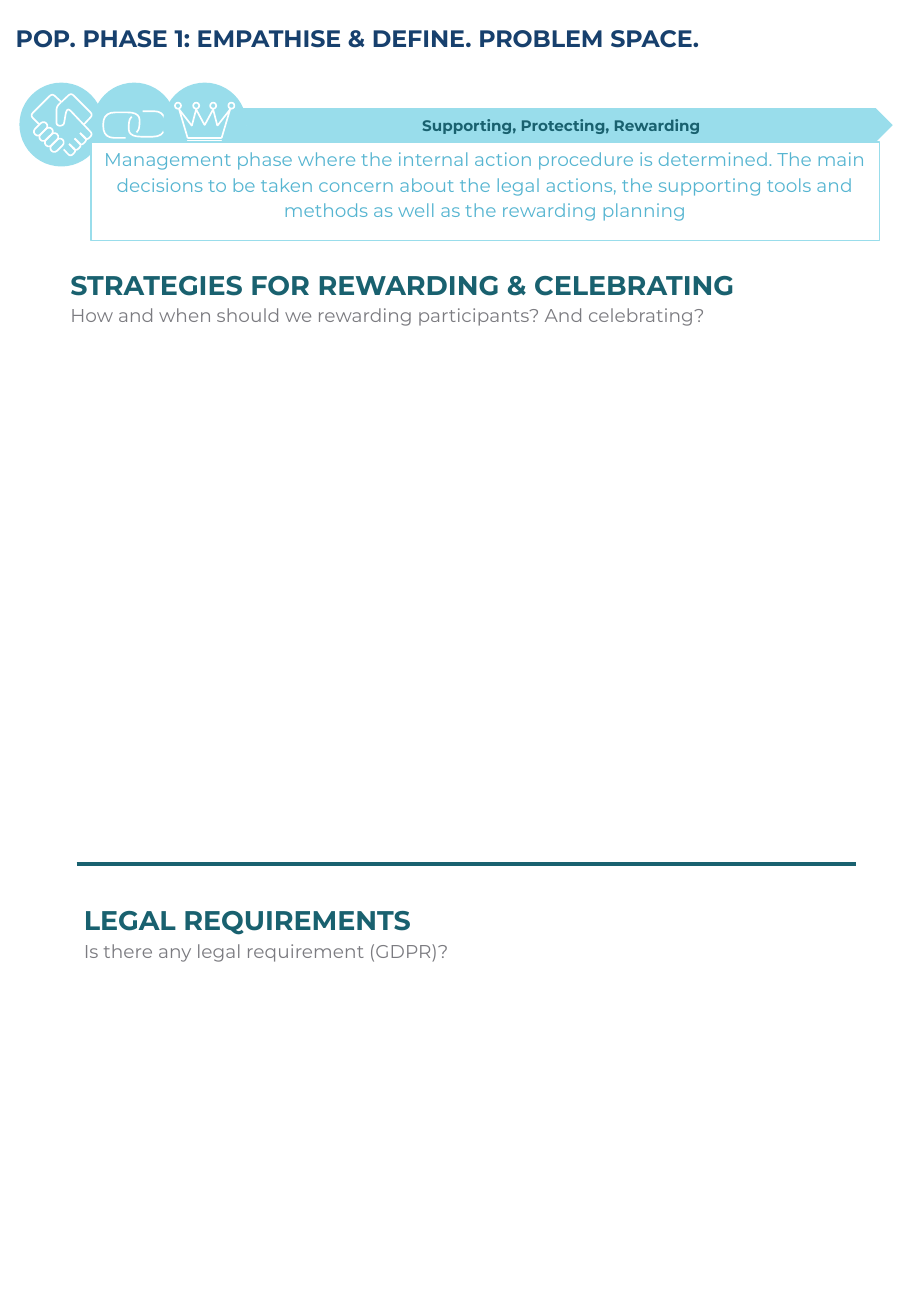
from math import dist
from pptx import Presentation
from pptx.dml.color import RGBColor
from pptx.enum.shapes import MSO_CONNECTOR, MSO_SHAPE
from pptx.enum.text import MSO_ANCHOR, PP_ALIGN
from pptx.oxml.xmlchemy import OxmlElement
from pptx.util import Inches, Pt

WHITE = RGBColor(0xFF, 0xFF, 0xFF)
NAVY = RGBColor(0x17, 0x40, 0x6D)
TEAL = RGBColor(0x19, 0x61, 0x6F)
AQUA = RGBColor(0x99, 0xDD, 0xEB)
SKY = RGBColor(0x56, 0xB5, 0xD1)
GREY = RGBColor(0x7B, 0x7B, 0x80)
FONT = "Montserrat"

TITLE = "POP. PHASE 1: EMPATHISE & DEFINE. PROBLEM SPACE."
PHASE = "Supporting, Protecting, Rewarding"
SUMMARY = (
    "Management phase where the internal action procedure is determined. "
    "The main decisions to be taken concern about the legal actions, the "
    "supporting tools and methods as well as the rewarding planning"
)
SECTIONS = [  # left, top, width, heading, question
    (0.52, 2.15, 5.8, "STRATEGIES FOR REWARDING & CELEBRATING",
     "How and when should we rewarding participants? And celebrating?"),
    (0.63, 7.38, 3.85, "LEGAL REQUIREMENTS",
     "Is there any legal requirement (GDPR)?"),
]

# Icon strokes: hundredths of an inch from the centre of their disc
DISC = 0.69
DISC_Y = 1.025
HANDS_X, CHAIN_X, CROWN_X = 0.505, 1.105, 1.685
PALMS = [
    [(-18.5, -0.5), (-25.5, -7.5), (-7.5, -25.5), (0, -18.5)],
    [(0, -18.5), (8, -26), (26, -8), (18.5, 0)],
    [(0, -18.5), (-4, -14.5), (-4, 1), (2, 1), (4, -11), (6, -13),
     (26, 8), (21, 13), (15.5, 7)],
]
FINGER = [(15.5, 7), (21.5, 12.5), (16.5, 17.5), (11, 11.5)]
FINGER_STEP = 4.5
LINK = [(-7, 11), (-25.5, 11), (-25.5, -10), (4.5, -10), (4.5, 3), (2, 6.5)]
CROWN = [(-21, -12.5), (-14, 11), (14, 11), (21, -12.5), (10.5, 1),
         (7, -12.5), (0, 0.5), (-7, -12.5), (-10.5, 1), (-21, -12.5)]
BEADS = [-22, -7, 7, 22]

prs = Presentation()
prs.slide_width, prs.slide_height = Inches(7.5), Inches(10.83)
slide = prs.slides.add_slide(prs.slide_layouts[6])
shapes = slide.shapes


def paint(shape, fill=None, line=None, width=1):
    shape.shadow.inherit = False
    if fill is None:
        shape.fill.background()
    else:
        shape.fill.solid()
        shape.fill.fore_color.rgb = fill
    if line is None:
        shape.line.fill.background()
    else:
        shape.line.color.rgb = line
        shape.line.width = Pt(width)


def add_preset(preset, left, top, width, height, **colours):
    shape = shapes.add_shape(preset, *map(Inches, (left, top, width, height)))
    paint(shape, **colours)
    return shape


def write(shape, lines, spacing=1.15, align=PP_ALIGN.LEFT,
          anchor=MSO_ANCHOR.TOP, insets=(0.06, 0.02, 0.06, 0.03)):
    """Fill a shape with lines of (text, size, colour, bold)."""
    frame = shape.text_frame
    frame.word_wrap = True
    frame.vertical_anchor = anchor
    (frame.margin_left, frame.margin_top,
     frame.margin_right, frame.margin_bottom) = map(Inches, insets)
    frame.text = "\n".join(line[0] for line in lines)
    for paragraph, (_, size, colour, bold) in zip(frame.paragraphs, lines):
        paragraph.alignment = align
        paragraph.line_spacing = spacing
        font = paragraph.runs[0].font
        font.name, font.size, font.bold = FONT, Pt(size), bold
        font.color.rgb = colour


def add_text(left, top, width, height, lines, **layout):
    write(shapes.add_textbox(*map(Inches, (left, top, width, height))),
          lines, **layout)


def toward(start, end, reach):
    """Point on start-end at the given reach, at most halfway."""
    share = min(reach / dist(start, end), 0.5)
    return tuple(a + (b - a) * share for a, b in zip(start, end))


def rounded(points, radius):
    """Replace each inner corner by a sampled quadratic curve."""
    curve = [points[0]]
    for before, corner, after in zip(points, points[1:], points[2:]):
        start, end = toward(corner, before, radius), toward(corner, after, radius)
        for t in (0, 0.2, 0.4, 0.6, 0.8, 1):
            curve.append(tuple(
                (1 - t) ** 2 * a + 2 * t * (1 - t) * b + t * t * c
                for a, b, c in zip(start, corner, end)))
    return curve + [points[-1]]


def add_stroke(centre_x, points, radius):
    path_points = [(Inches(centre_x + x / 100), Inches(DISC_Y + y / 100))
                   for x, y in rounded(points, radius)]
    builder = shapes.build_freeform(*path_points[0], scale=1.0)
    builder.add_line_segments(path_points[1:], close=False)
    paint(builder.convert_to_shape(), line=WHITE)


def add_disc(centre_x):
    add_preset(MSO_SHAPE.OVAL, centre_x - DISC / 2, DISC_Y - DISC / 2,
               DISC, DISC, fill=AQUA)


def draw_hands():
    add_disc(HANDS_X)
    for palm in PALMS:
        add_stroke(HANDS_X, palm, 3)
    for i in range(3):
        shift = i * FINGER_STEP
        add_stroke(HANDS_X, [(x - shift, y + shift) for x, y in FINGER], 3)
    length, thickness = 0.13, 0.065
    for i in range(4):
        offset = i * FINGER_STEP / 100
        knuckle = add_preset(
            MSO_SHAPE.ROUNDED_RECTANGLE, 0.335 + offset - length / 2,
            1.06 + offset - thickness / 2, length, thickness, line=WHITE)
        knuckle.adjustments[0] = 0.5
        knuckle.rotation = -45


def draw_chain():
    add_disc(CHAIN_X)
    for turn in (1, -1):
        add_stroke(CHAIN_X, [(turn * x, turn * y) for x, y in LINK], 10)


def draw_crown():
    add_disc(CROWN_X)
    add_stroke(CROWN_X, CROWN, 0.5)
    bead = 0.05
    for x in BEADS:
        add_preset(MSO_SHAPE.OVAL, CROWN_X + x / 100 - bead / 2, 0.87 - bead / 2,
                   bead, bead, line=WHITE)
    add_preset(MSO_SHAPE.RECTANGLE, CROWN_X - 0.14, 1.16, 0.28, 0.04, line=WHITE)


banner = add_preset(MSO_SHAPE.CHEVRON, 1.89, 0.89, 5.46, 0.28, fill=AQUA)
write(banner, [(PHASE, 9, TEAL, True)], spacing=1.0, align=PP_ALIGN.CENTER,
      anchor=MSO_ANCHOR.MIDDLE, insets=(0.1, 0.05, 0.1, 0.05))
draw_hands()
draw_chain()
draw_crown()

add_text(0.13, 0.17, 7.2, 0.55, [(TITLE, 14.1, NAVY, True)],
         spacing=1.1, insets=(0, 0, 0, 0))
summary = add_preset(MSO_SHAPE.RECTANGLE, 0.75, 1.17, 6.49, 0.81,
                     fill=WHITE, line=AQUA)
write(summary, [(SUMMARY, 11, SKY, False)], align=PP_ALIGN.CENTER)

for left, top, width, heading, question in SECTIONS:
    add_text(left, top, width, 0.6,
             [(heading, 16, TEAL, True), (question, 11, GREY, False)])

divider = shapes.add_connector(
    MSO_CONNECTOR.STRAIGHT, *map(Inches, (0.63, 7.11, 7.05, 7.11)))
divider.line.color.rgb = TEAL
divider.line.width = Pt(2.25)
divider._element.spPr.append(OxmlElement("a:effectLst"))

prs.save("out.pptx")
